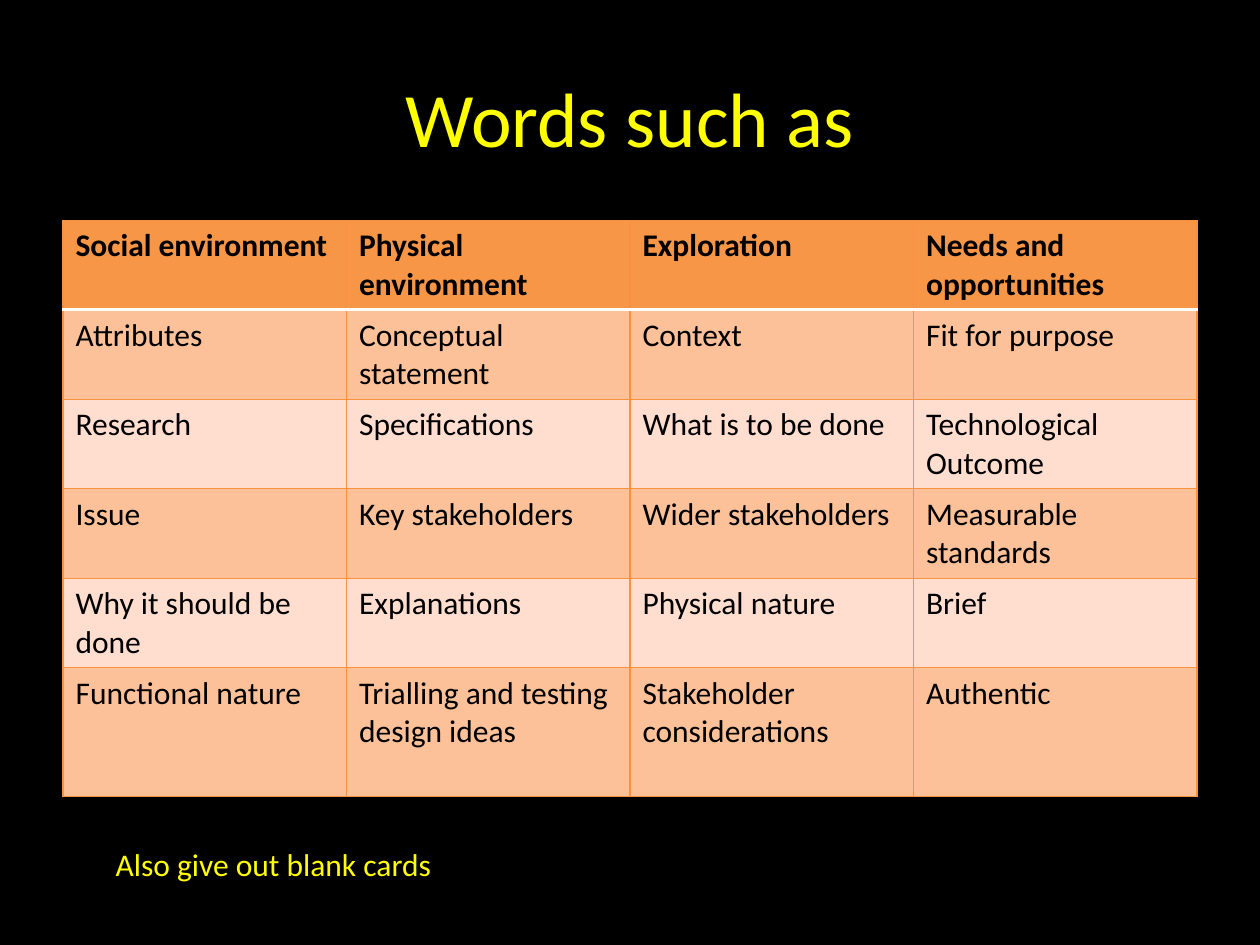
from lxml import etree
from pptx import Presentation, util as u
from pptx.dml.color import RGBColor
from pptx.enum import text
from pptx.oxml import ns

# Content
TITLE = "Words such as"
WORDS = [
    ["Social environment", "Physical environment", "Exploration", "Needs and opportunities"],
    ["Attributes", "Conceptual statement", "Context", "Fit for purpose"],
    ["Research", "Specifications", "What is to be done", "Technological\nOutcome"],
    ["Issue", "Key stakeholders", "Wider stakeholders", "Measurable standards"],
    ["Why it should be done", "Explanations", "Physical nature", "Brief"],
    ["Functional nature", "Trialling and testing design ideas", "Stakeholder considerations",
     "Authentic"],
]
REMINDER = "Also give out blank cards"

COLORS = {"background": "000000", "accent": "FFFF00", "ink": "000000", "header": "F79646",
          "dark band": "FCC199", "light band": "FFDED0", "grid": "F69240", "rule": "FFFFFF"}
FONT = "Calibri"
WIDTH, HEIGHT = u.Inches(10), u.Inches(7.5)
MARGIN = WIDTH * 0.05
ROW_HEIGHT, LAST_ROW_HEIGHT = u.Inches(0.71), u.Inches(1.02)


def color(name):
    return RGBColor.from_string(COLORS[name])


def write(frame, words, size, ink, bold=False, align=text.PP_ALIGN.LEFT):
    frame.text = words
    frame.word_wrap = True
    for paragraph in frame.paragraphs:
        paragraph.alignment = align
        font = paragraph.font
        font.name, font.size, font.bold = FONT, u.Pt(size), bold
        font.color.rgb = color(ink)


def add_border(cell, side, name, points):
    properties = cell._tc.get_or_add_tcPr()
    line = etree.SubElement(properties, ns.qn(f"a:ln{side}"), w=str(u.Pt(points)))
    fill = etree.SubElement(line, ns.qn("a:solidFill"))
    etree.SubElement(fill, ns.qn("a:srgbClr"), val=COLORS[name])


deck = Presentation()
deck.slide_width, deck.slide_height = WIDTH, HEIGHT
slide = deck.slides.add_slide(deck.slide_layouts[6])
slide.background.fill.solid()
slide.background.fill.fore_color.rgb = color("background")

# Title
title = slide.shapes.add_textbox(int(MARGIN), int(HEIGHT * 0.04), int(WIDTH * 0.9),
                                 u.Inches(1.25)).text_frame
title.vertical_anchor = text.MSO_ANCHOR.MIDDLE
write(title, TITLE, 44, "accent", align=text.PP_ALIGN.CENTER)

# Word table: header row, then alternating bands
row_count, column_count = len(WORDS), len(WORDS[0])
table_height = ROW_HEIGHT * (row_count - 1) + LAST_ROW_HEIGHT
table = slide.shapes.add_table(row_count, column_count, int(MARGIN), u.Inches(1.75),
                               int(WIDTH * 0.9), table_height).table
for r, row_words in enumerate(WORDS):
    table.rows[r].height = LAST_ROW_HEIGHT if r == row_count - 1 else ROW_HEIGHT
    band = "header" if r == 0 else "dark band" if r % 2 else "light band"
    for c, words in enumerate(row_words):
        cell = table.cell(r, c)
        write(cell.text_frame, words, 18, "ink", bold=r == 0)
        for side in "LRTB":
            under_header = (r, side) in [(0, "B"), (1, "T")]
            add_border(cell, side, *(("rule", 2) if under_header else ("grid", 0.75)))
        cell.fill.solid()
        cell.fill.fore_color.rgb = color(band)

# Reminder below the table
reminder = slide.shapes.add_textbox(u.Inches(0.82), u.Inches(6.66), u.Inches(8.23), u.Inches(0.4))
write(reminder.text_frame, REMINDER, 18, "accent")

deck.save("out.pptx")
